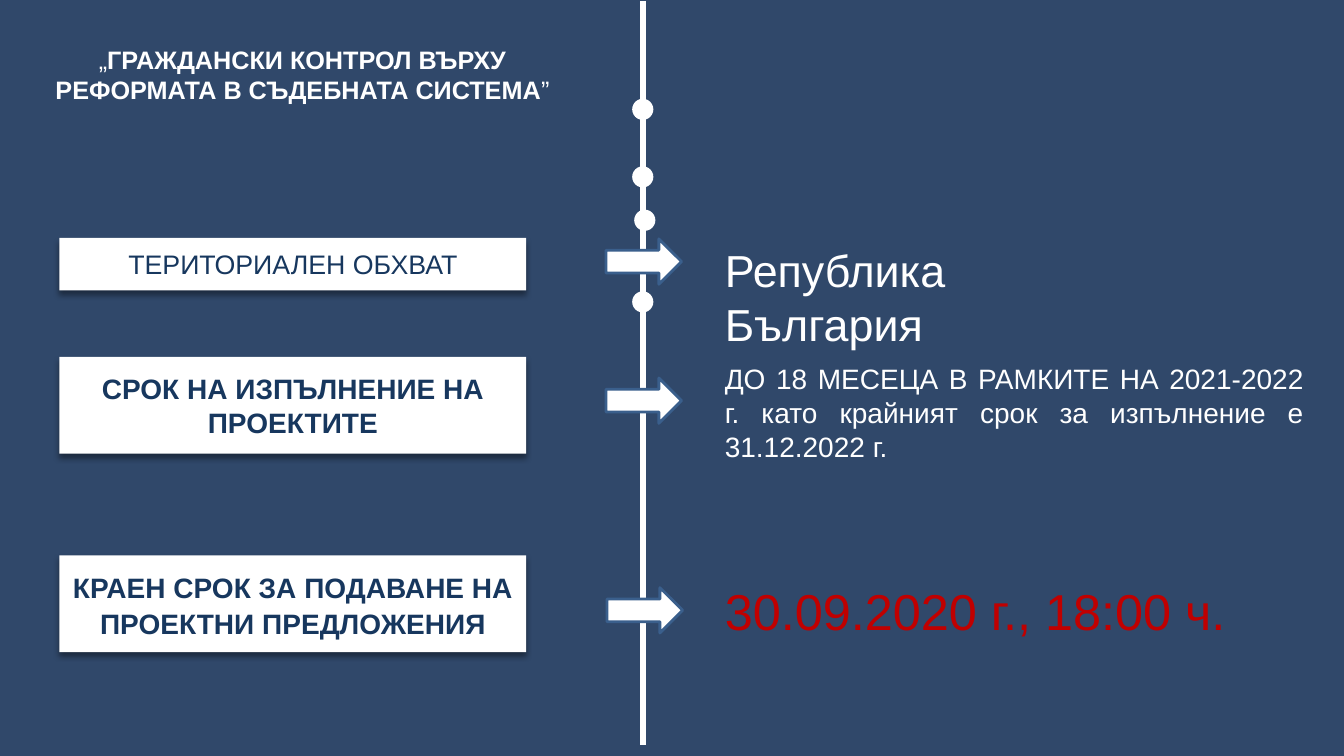
from lxml import etree
from pptx import Presentation
from pptx.dml.color import RGBColor
from pptx.enum.shapes import MSO_CONNECTOR, MSO_SHAPE
from pptx.enum.text import MSO_ANCHOR, MSO_AUTO_SIZE, PP_ALIGN
from pptx.oxml.ns import qn
from pptx.util import Inches, Pt

RECTANGLE, OVAL, ARROW = MSO_SHAPE.RECTANGLE, MSO_SHAPE.OVAL, MSO_SHAPE.RIGHT_ARROW
STRAIGHT = MSO_CONNECTOR.STRAIGHT
TOP, MIDDLE = MSO_ANCHOR.TOP, MSO_ANCHOR.MIDDLE
LEFT, CENTER, JUSTIFY = PP_ALIGN.LEFT, PP_ALIGN.CENTER, PP_ALIGN.JUSTIFY
NO_AUTOFIT = MSO_AUTO_SIZE.NONE

BACKGROUND = RGBColor(0x30, 0x48, 0x6A)
WHITE = RGBColor(0xFF, 0xFF, 0xFF)
NAVY = RGBColor(0x17, 0x37, 0x5E)
ARROW_EDGE = RGBColor(0x3A, 0x5F, 0x8C)
RED = RGBColor(0xC0, 0x00, 0x00)

FONT = "Arial"
LABEL_LEFT, LABEL_WIDTH = 0.59, 4.63
DETAIL_LEFT = 7.09
AXIS_X = 6.38
DOT_SIZE = 0.21


def add_run(paragraph, text, size, color, bold=False):
    run = paragraph.add_run()
    run.text = text
    run.font.name = FONT
    run.font.size = Pt(size)
    run.font.color.rgb = color
    run.font.bold = bold


def prepare_frame(shape, anchor, alignment):
    """Set wrapping and alignment, and return the first paragraph."""
    frame = shape.text_frame
    frame.word_wrap = True
    frame.auto_size = NO_AUTOFIT
    frame.vertical_anchor = anchor
    paragraph = frame.paragraphs[0]
    paragraph.alignment = alignment
    return paragraph


def add_white_shape(slide, kind, left, top, width, height):
    shape = slide.shapes.add_shape(
        kind, Inches(left), Inches(top), Inches(width), Inches(height))
    shape.shadow.inherit = False
    shape.fill.solid()
    shape.fill.fore_color.rgb = WHITE
    shape.line.fill.background()
    return shape


def add_drop_shadow(shape):
    effects = shape._element.spPr.find(qn("a:effectLst"))
    shadow = etree.SubElement(
        effects, qn("a:outerShdw"), blurRad=str(Pt(4)), dist=str(Pt(3)),
        dir="5400000", rotWithShape="0")
    color = etree.SubElement(shadow, qn("a:srgbClr"), val="000000")
    etree.SubElement(color, qn("a:alpha"), val="40000")


def add_label(slide, text, top, height, size, bold):
    label = add_white_shape(slide, RECTANGLE, LABEL_LEFT, top, LABEL_WIDTH, height)
    add_drop_shadow(label)
    paragraph = prepare_frame(label, MIDDLE, CENTER)
    add_run(paragraph, text, size, NAVY, bold)
    return paragraph


def add_arrow(slide, left, top):
    arrow = add_white_shape(slide, ARROW, left, top, 0.75, 0.45)
    arrow.line.color.rgb = ARROW_EDGE
    arrow.line.width = Pt(2)


def add_detail(slide, text, top, width, height, size, color, alignment=LEFT):
    box = slide.shapes.add_textbox(
        Inches(DETAIL_LEFT), Inches(top), Inches(width), Inches(height))
    add_run(prepare_frame(box, TOP, alignment), text, size, color)


def add_timeline(slide):
    axis = slide.shapes.add_connector(
        STRAIGHT, Inches(AXIS_X), Inches(0.01), Inches(AXIS_X), Inches(7.39))
    axis.line.color.rgb = WHITE
    axis.line.width = Pt(4.5)
    etree.SubElement(axis._element.spPr, qn("a:effectLst"))
    for left, top in ((6.27, 0.98), (6.27, 1.65), (6.29, 2.08), (6.27, 2.89)):
        add_white_shape(slide, OVAL, left, top, DOT_SIZE, DOT_SIZE)


def format_title(slide):
    title = slide.shapes.title
    title.left, title.top = Inches(0.2), Inches(0.39)
    title.width, title.height = Inches(5.6), Inches(0.71)
    paragraph = prepare_frame(title, TOP, CENTER)
    add_run(paragraph, "„", 18, WHITE)
    add_run(paragraph, "ГРАЖДАНСКИ КОНТРОЛ ВЪРХУ РЕФОРМАТА В СЪДЕБНАТА СИСТЕМА",
            18, WHITE, bold=True)
    add_run(paragraph, "”", 18, WHITE)


def main():
    presentation = Presentation()
    presentation.slide_width = Inches(13.33)
    presentation.slide_height = Inches(7.5)
    slide = presentation.slides.add_slide(presentation.slide_layouts[5])
    slide.background.fill.solid()
    slide.background.fill.fore_color.rgb = BACKGROUND

    format_title(slide)
    add_timeline(slide)

    add_label(slide, "ТЕРИТОРИАЛЕН ОБХВАТ", 2.36, 0.52, 19.1, False)
    add_label(slide, "СРОК НА ИЗПЪЛНЕНИЕ НА ПРОЕКТИТЕ", 3.54, 0.96, 20, True)
    deadline = add_label(
        slide, "КРАЕН СРОК ЗА ПОДАВАНЕ НА ПРОЕКТНИ ПРЕДЛОЖЕНИЯ", 5.51, 0.96, 20, True)
    deadline.line_spacing = 1.07
    deadline.space_before = deadline.space_after = Pt(3)

    for left, top in ((6.01, 2.37), (6.01, 3.75), (6.02, 5.83)):
        add_arrow(slide, left, top)

    add_detail(slide, "Република България", 2.36, 4.41, 0.64, 32, WHITE)
    add_detail(
        slide,
        "ДО 18 МЕСЕЦА В РАМКИТЕ НА 2021-2022 г. "
        "като крайният срок за изпълнение е 31.12.2022 г.",
        3.54, 5.94, 1.11, 20, WHITE, JUSTIFY)
    add_detail(slide, "30.09.2020 г., 18:00 ч.", 5.71, 5.48, 0.71, 36, RED)

    presentation.save("out.pptx")


if __name__ == "__main__":
    main()
